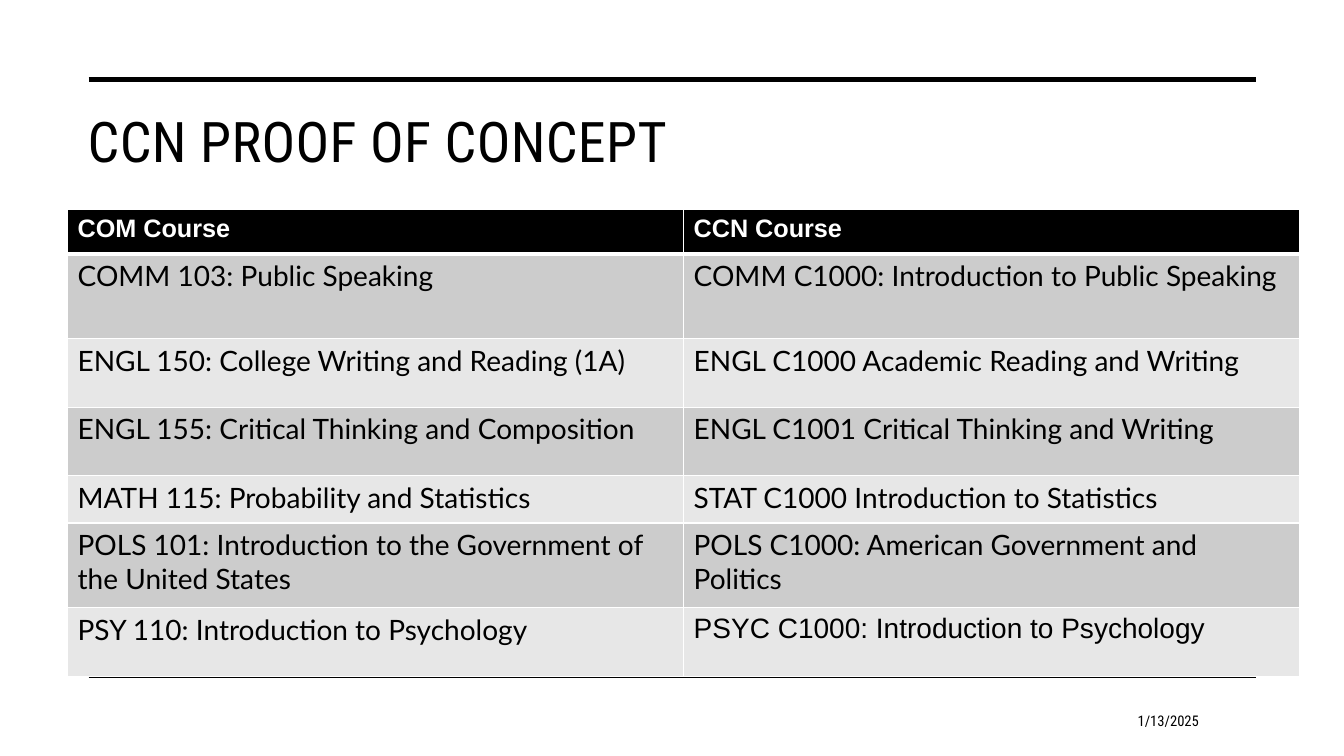
from dataclasses import dataclass

from lxml import etree
from pptx import Presentation
from pptx.dml.color import RGBColor
from pptx.enum.shapes import MSO_CONNECTOR
from pptx.enum.text import MSO_ANCHOR, MSO_AUTO_SIZE, PP_ALIGN
from pptx.oxml.ns import qn
from pptx.util import Inches, Pt

STRAIGHT = MSO_CONNECTOR.STRAIGHT
TOP, MIDDLE = MSO_ANCHOR.TOP, MSO_ANCHOR.MIDDLE
LEFT, RIGHT = PP_ALIGN.LEFT, PP_ALIGN.RIGHT
NO_AUTOFIT = MSO_AUTO_SIZE.NONE


@dataclass(frozen=True)
class Theme:
    """Colours, fonts and type sizes of the slide."""

    ink: str = "000000"
    paper: str = "FFFFFF"
    bands: tuple = ("CCCCCC", "E7E7E7")
    display: str = "Roboto Condensed"
    header: str = "Arial"
    body: str = "Lato"
    title_size: float = 40
    header_size: float = 18
    body_size: float = 20
    date_size: float = 10.5


THEME = Theme()
PAGE_WIDTH, PAGE_HEIGHT = 13.33, 7.5
RULE_LEFT, RULE_RIGHT = 0.88, 12.46
TABLE_LEFT, TABLE_TOP, COLUMN_WIDTH = 0.67, 2.08, 6.11
ROW_HEIGHTS = (0.44, 0.84, 0.68, 0.68, 0.47, 0.84, 0.68)
COURSES = (
    ("COM Course", "CCN Course"),
    ("COMM 103: Public Speaking", "COMM C1000: Introduction to Public Speaking"),
    ("ENGL 150: College Writing and Reading (1A)", "ENGL C1000 Academic Reading and Writing"),
    ("ENGL 155: Critical Thinking and Composition", "ENGL C1001 Critical Thinking and Writing"),
    ("MATH 115: Probability and Statistics", "STAT C1000 Introduction to Statistics"),
    ("POLS 101: Introduction to the Government of the United States",
     "POLS C1000: American Government and Politics"),
    ("PSY 110: Introduction to Psychology", "PSYC C1000: Introduction to Psychology"),
)


def write(frame, text, face, size, color=THEME.ink, align=LEFT, bold=False):
    """Put one formatted paragraph in a text frame and return it."""
    para = frame.paragraphs[0]
    para.text = text
    para.alignment = align
    font = para.font
    font.name, font.size, font.bold = face, Pt(size), bold
    font.color.rgb = RGBColor.from_string(color)
    return para


def add_rule(page, y, weight):
    """Draw a horizontal rule between the page margins."""
    rule = page.shapes.add_connector(
        STRAIGHT, Inches(RULE_LEFT), Inches(y), Inches(RULE_RIGHT), Inches(y))
    rule.line.color.rgb = RGBColor.from_string(THEME.ink)
    rule.line.width = Pt(weight)
    etree.SubElement(rule._element.spPr, qn("a:effectLst"))


def set_title(page, text):
    """Move and format the title placeholder."""
    title = page.shapes.title
    title.left, title.top, title.width, title.height = map(Inches, (0.77, 1.01, 11.69, 1.5))
    frame = title.text_frame
    frame.vertical_anchor, frame.auto_size = TOP, NO_AUTOFIT
    para = write(frame, text, THEME.display, THEME.title_size)
    para.runs[0]._r.get_or_add_rPr().set("spc", "30")


def add_date(page, text):
    """Add the date at the foot of the page."""
    box = page.shapes.add_textbox(*map(Inches, (9.15, 6.95, 2.84, 0.4)))
    frame = box.text_frame
    frame.word_wrap, frame.vertical_anchor = True, MIDDLE
    write(frame, text, THEME.display, THEME.date_size, align=RIGHT)


def style_cell(cell, fill, bottom_weight):
    """Give a cell its borders and fill."""
    properties = cell._tc.get_or_add_tcPr()
    for side, weight in (("L", 1), ("R", 1), ("T", 1), ("B", bottom_weight)):
        border = etree.SubElement(properties, qn(f"a:ln{side}"), w=str(Pt(weight)))
        solid = etree.SubElement(border, qn("a:solidFill"))
        etree.SubElement(solid, qn("a:srgbClr"), val=THEME.paper)
    cell.fill.solid()
    cell.fill.fore_color.rgb = RGBColor.from_string(fill)


def add_course_table(page):
    """Add the table that pairs each college course with its common number."""
    table = page.shapes.add_table(
        len(COURSES), 2, Inches(TABLE_LEFT), Inches(TABLE_TOP),
        Inches(2 * COLUMN_WIDTH), Inches(sum(ROW_HEIGHTS))).table
    for column in table.columns:
        column.width = Inches(COLUMN_WIDTH)
    for r, (height, names) in enumerate(zip(ROW_HEIGHTS, COURSES)):
        table.rows[r].height = Inches(height)
        for c, name in enumerate(names):
            cell = table.cell(r, c)
            if r == 0:
                style_cell(cell, THEME.ink, 3)
                write(cell.text_frame, name, THEME.header, THEME.header_size,
                      THEME.paper, bold=True)
            else:
                style_cell(cell, THEME.bands[(r - 1) % 2], 1)
                face = THEME.header if name.startswith("PSYC") else THEME.body
                write(cell.text_frame, name, face, THEME.body_size)


def main():
    """Build the slide and save the deck."""
    deck = Presentation()
    deck.slide_width, deck.slide_height = Inches(PAGE_WIDTH), Inches(PAGE_HEIGHT)
    page = deck.slides.add_slide(deck.slide_layouts[5])
    add_rule(page, 0.79, 3.5)
    add_rule(page, 6.72, 1)
    set_title(page, "CCN PROOF OF CONCEPT")
    add_date(page, "1/13/2025")
    add_course_table(page)
    deck.save("out.pptx")


if __name__ == "__main__":
    main()
